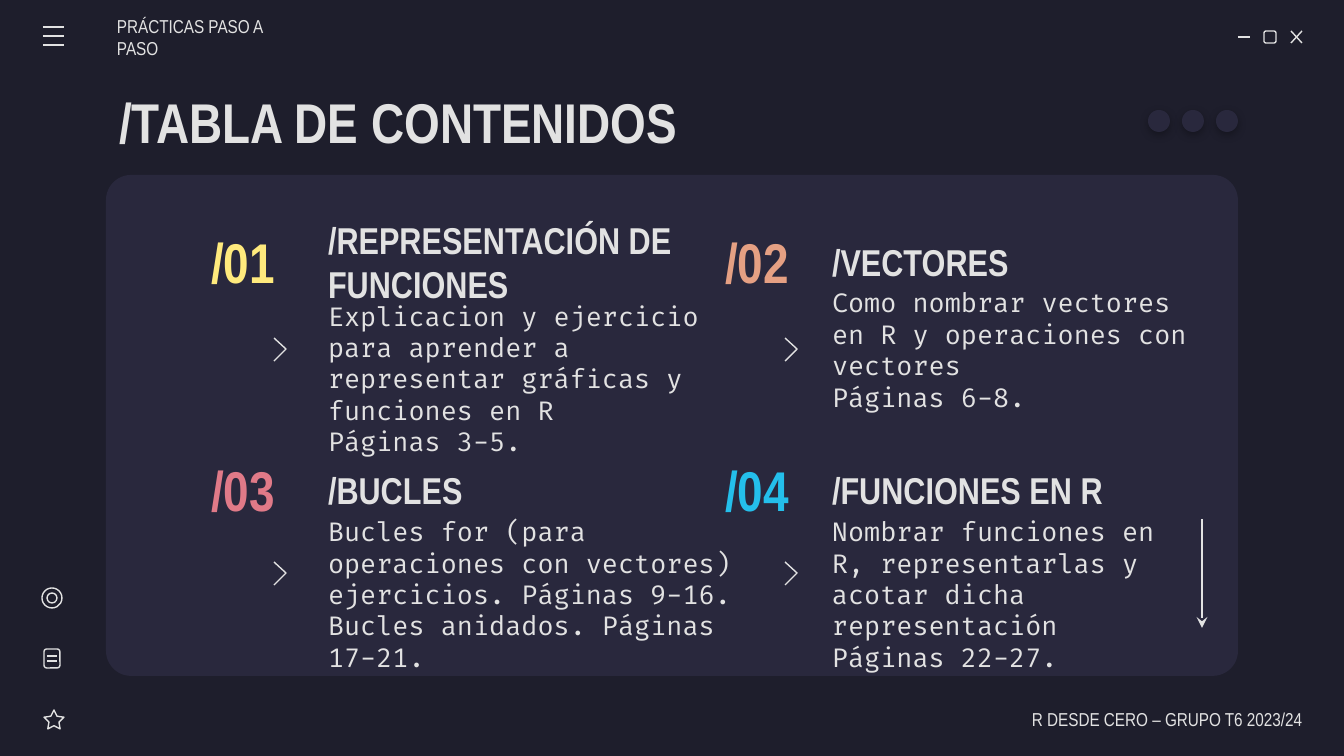
from lxml import etree
from pptx import Presentation
from pptx.dml.color import RGBColor
from pptx.enum.shapes import MSO_CONNECTOR, MSO_SHAPE as SHAPE
from pptx.enum.text import MSO_ANCHOR, MSO_AUTO_SIZE, PP_ALIGN as ALIGN
from pptx.oxml import parse_xml
from pptx.oxml.ns import nsdecls, qn
from pptx.util import Pt

PX = 9144000 / 1344
NIGHT = RGBColor(0x1E, 0x1E, 0x2C)
PANEL = RGBColor(0x29, 0x28, 0x3D)
PALE = RGBColor(0xE2, 0xE2, 0xE2)
YELLOW = RGBColor(0xFF, 0xEA, 0x7D)
ORANGE = RGBColor(0xE5, 0xA0, 0x83)
PINK = RGBColor(0xE0, 0x7A, 0x88)
CYAN = RGBColor(0x24, 0xBF, 0xEB)
NARROW = "Arial Narrow"
CODE = "Fira Code"

prs = Presentation()
prs.slide_width, prs.slide_height = round(1344 * PX), round(756 * PX)
slide = prs.slides.add_slide(prs.slide_layouts[5])
slide.background.fill.solid()
slide.background.fill.fore_color.rgb = NIGHT
shapes = slide.shapes


def write(holder, box, lines, size, font=NARROW, color=PALE, bold=False,
          align=ALIGN.LEFT, left=13, right=13):
    holder.left, holder.top, holder.width, holder.height = (round(v * PX) for v in box)
    frame = holder.text_frame
    frame.word_wrap = True
    frame.auto_size = MSO_AUTO_SIZE.NONE
    frame.vertical_anchor = MSO_ANCHOR.MIDDLE
    frame.margin_left, frame.margin_right = round(left * PX), round(right * PX)
    frame.margin_top = frame.margin_bottom = round(13 * PX)
    for i, line in enumerate(lines):
        paragraph = frame.paragraphs[0] if i == 0 else frame.add_paragraph()
        paragraph.alignment = align
        run = paragraph.add_run()
        run.text = line
        run.font.name, run.font.size, run.font.bold = font, Pt(size), bold
        run.font.color.rgb = color


def stroke(x1, y1, x2, y2):
    line = shapes.add_connector(MSO_CONNECTOR.STRAIGHT, *(round(v * PX) for v in (x1, y1, x2, y2)))
    line.line.color.rgb = PALE
    line.line.width = Pt(0.75)
    etree.SubElement(line._element.spPr, qn("a:effectLst"))
    return line


panel = shapes.add_shape(SHAPE.ROUNDED_RECTANGLE, *(round(v * PX) for v in (106, 175, 1132, 501)))
panel.adjustments[0] = 0.05
panel.shadow.inherit = False
panel.fill.solid()
panel.fill.fore_color.rgb = PANEL
panel.line.fill.background()

write(shapes.title, (106, 79, 1132, 85), ["/TABLA DE CONTENIDOS"], 30, bold=True)

sections = [
    ("/01", YELLOW, "/REPRESENTACIÓN DE FUNCIONES", 382, 404, 159,
     ["Explicacion y ejercicio para aprender a representar gráficas y funciones en R",
      "Páginas 3-5."]),
    ("/02", ORANGE, "/VECTORES", 344, 386, 101,
     ["Como nombrar vectores en R y operaciones con vectores", "Páginas 6-8."]),
    ("/03", PINK, "/BUCLES", 344, 444, 134,
     ["Bucles for (para operaciones con vectores) ejercicios. Páginas 9-16.",
      "Bucles anidados. Páginas 17-21."]),
    ("/04", CYAN, "/FUNCIONES EN R", 344, 383, 134,
     ["Nombrar funciones en R, representarlas y acotar dicha representación",
      "Páginas 22-27."]),
]
number_lefts, text_lefts, chevron_lefts = (182, 696), (315, 819), (274, 785)
heading_tops, chevron_tops = (224, 452), (338, 562)
for i, (number, color, heading, heading_width, body_width, body_height, body) in enumerate(sections):
    row, col = divmod(i, 2)
    top, text_left = heading_tops[row], text_lefts[col]
    write(shapes.add_textbox(0, 0, 0, 0), (text_left, top, heading_width, 75), [heading], 20, bold=True)
    write(shapes.add_textbox(0, 0, 0, 0), (number_lefts[col], top, 122, 75), [number], 30,
          color=color, bold=True, align=ALIGN.CENTER)
    write(shapes.add_textbox(0, 0, 0, 0), (text_left, top + 75, body_width, body_height), body, 14, CODE)

    x, y = chevron_lefts[col], chevron_tops[row]
    builder = shapes.build_freeform(x, y, scale=PX)
    builder.add_line_segments([(x + 12, y + 11), (x, y + 23)], close=False)
    chevron = builder.convert_to_shape()
    chevron.shadow.inherit = False
    chevron.fill.background()
    chevron.line.color.rgb = PALE
    chevron.line.width = Pt(0.75)

icon_outlines = [
    (SHAPE.ROUNDED_RECTANGLE, 1264, 31, 12, 12, 0.17),
    (SHAPE.STAR_5_POINT, 44, 710, 20, 19, 0.25),
    (SHAPE.ROUNDED_RECTANGLE, 44, 649, 16, 19, 0.17),
    (SHAPE.OVAL, 42, 588, 20, 20, None),
    (SHAPE.OVAL, 47, 593, 10, 10, None),
]
for kind, x, y, width, height, adjustment in icon_outlines:
    icon = shapes.add_shape(kind, *(round(v * PX) for v in (x, y, width, height)))
    if adjustment is not None:
        icon.adjustments[0] = adjustment
    icon.shadow.inherit = False
    icon.fill.background()
    icon.line.color.rgb = PALE
    icon.line.width = Pt(0.75)

for menu_y in (27, 36, 45):
    stroke(43, menu_y, 64, menu_y)
for note_y in (656, 661):
    stroke(47, note_y, 57, note_y)
stroke(1238, 37, 1250, 37)
stroke(1291, 31, 1302, 43)
stroke(1302, 31, 1291, 43)

scroll_arrow = stroke(1202, 519, 1202, 628)
etree.SubElement(scroll_arrow.line._get_or_add_ln(), qn("a:tailEnd"), type="stealth")

for i in range(3):
    dot = shapes.add_shape(SHAPE.OVAL, *(round(v * PX) for v in (1216 - 34 * i, 110, 22, 22)))
    dot.fill.solid()
    dot.fill.fore_color.rgb = PANEL
    dot.line.fill.background()
    dot._element.spPr.append(parse_xml(
        f'<a:effectLst {nsdecls("a")}>'
        '<a:outerShdw blurRad="57150" dist="19050" dir="5400000" algn="bl" rotWithShape="0">'
        '<a:srgbClr val="000000"><a:alpha val="30000"/></a:srgbClr>'
        '</a:outerShdw></a:effectLst>'))

write(shapes.add_textbox(0, 0, 0, 0), (117, 17, 192, 40), ["PRÁCTICAS PASO A PASO"], 10, left=0)
write(shapes.add_textbox(0, 0, 0, 0), (985, 699, 317, 40),
      ["R DESDE CERO – GRUPO T6 2023/24"], 10, align=ALIGN.RIGHT, right=0)

prs.save("out.pptx")
